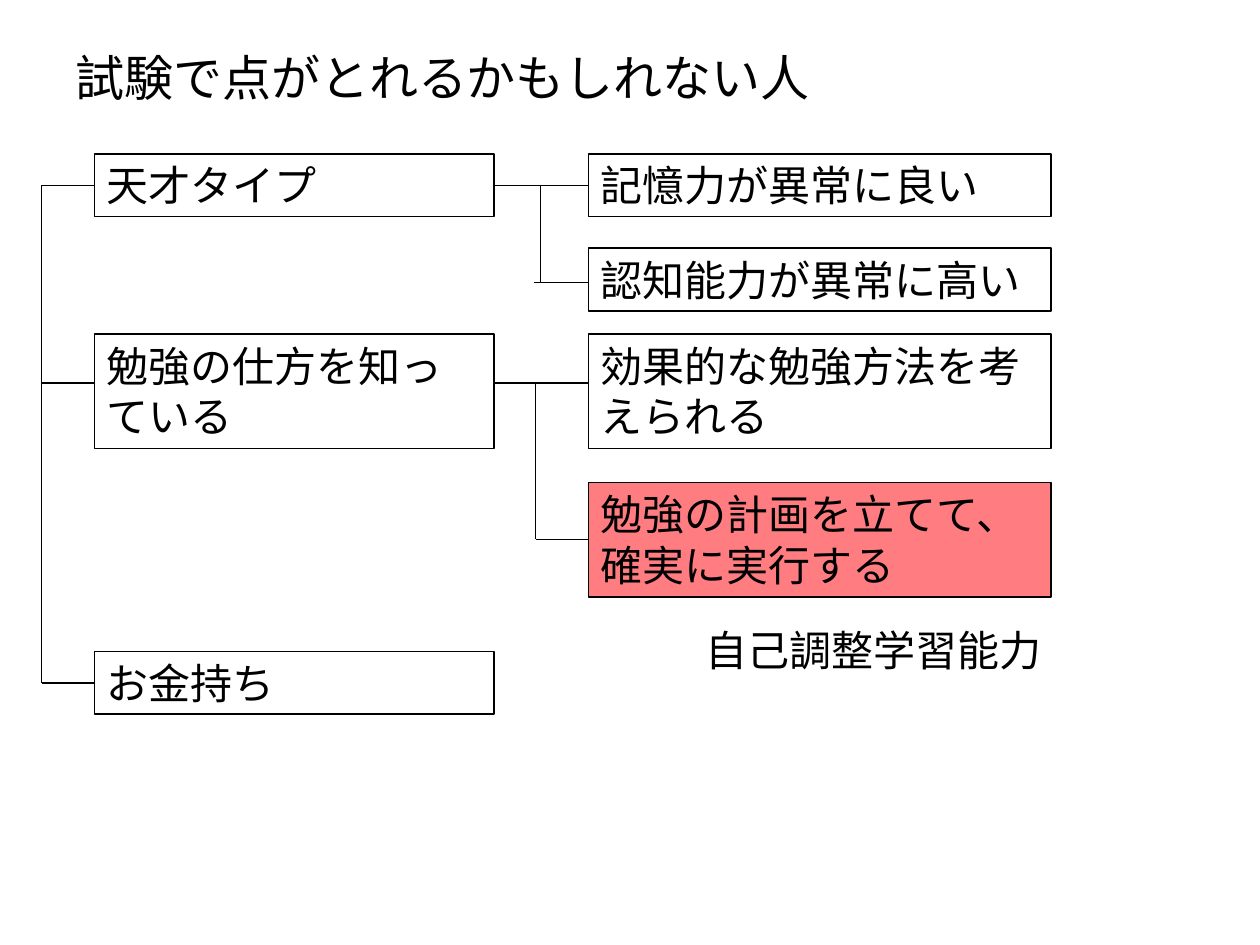
from lxml import etree
from pptx import Presentation
from pptx.dml.color import RGBColor
from pptx.enum.shapes import MSO_CONNECTOR, MSO_SHAPE
from pptx.enum.text import MSO_ANCHOR, MSO_AUTO_SIZE, PP_ALIGN
from pptx.oxml.ns import qn
from pptx.util import Inches, Pt

RECTANGLE = MSO_SHAPE.RECTANGLE
STRAIGHT = MSO_CONNECTOR.STRAIGHT
TOP = MSO_ANCHOR.TOP
LEFT = PP_ALIGN.LEFT
NO_AUTOFIT = MSO_AUTO_SIZE.NONE

FONT = "Noto Sans CJK JP"
COLORS = {"ink": "000000", "highlight": "FF7C80"}

TITLE = "試験で点がとれるかもしれない人"
CAPTION = "自己調整学習能力"
TYPES = [
    ("天才タイプ", 1.22, 0.5),
    ("勉強の仕方を知っている", 2.65, 0.91),
    ("お金持ち", 5.17, 0.5),
]
TRAITS = [
    ("記憶力が異常に良い", 1.22, 0.5, None),
    ("認知能力が異常に高い", 1.97, 0.5, None),
    ("効果的な勉強方法を考えられる", 2.65, 0.91, None),
    ("勉強の計画を立てて、確実に実行する", 3.83, 0.91, "highlight"),
]
BRANCHES = [
    {"start": 1.47, "end": 2.24, "stem": 4.29, "stub": 4.24},
    {"start": 3.04, "end": 4.28, "stem": 4.25, "stub": 4.25},
]

TRUNK = 0.33
TYPE_LEFT, TYPE_WIDTH = 0.75, 3.17
TRAIT_LEFT, TRAIT_WIDTH = 4.67, 3.67
TYPE_RIGHT = TYPE_LEFT + TYPE_WIDTH
TYPE_JOINS = [1.47, 3.04, 5.42]


def color(name):
    return RGBColor.from_string(COLORS[name])


def write(box, text, size):
    frame = box.text_frame
    frame.word_wrap = True
    frame.auto_size = NO_AUTOFIT
    frame.vertical_anchor = TOP
    para = frame.paragraphs[0]
    para.text = text
    para.alignment = LEFT
    para.font.size = Pt(size)
    para.font.color.rgb = color("ink")
    para.font.name = FONT
    defaults = para._p.pPr.find(qn("a:defRPr"))
    etree.SubElement(defaults, qn("a:ea"), typeface=FONT)


def add_box(page, text, left, top, width, height, fill=None):
    box = page.shapes.add_shape(
        RECTANGLE, Inches(left), Inches(top), Inches(width), Inches(height))
    box.shadow.inherit = False
    if fill:
        box.fill.solid()
        box.fill.fore_color.rgb = color(fill)
    else:
        box.fill.background()
    box.line.color.rgb = color("ink")
    box.line.width = Pt(1)
    write(box, text, 24)


def add_line(page, x1, y1, x2, y2):
    line = page.shapes.add_connector(
        STRAIGHT, Inches(x1), Inches(y1), Inches(x2), Inches(y2))
    line.line.color.rgb = color("ink")
    line.line.width = Pt(0.75)
    etree.SubElement(line._element.spPr, qn("a:effectLst"))


def main():
    """Build a slide with a tree of people who may score well in exams."""
    deck = Presentation()
    deck.slide_width, deck.slide_height = Inches(10), Inches(7.5)
    page = deck.slides.add_slide(deck.slide_layouts[5])

    title = page.shapes.title
    title.left, title.top = Inches(0.5), Inches(0.33)
    title.width, title.height = Inches(7.83), Inches(0.57)
    write(title, TITLE, 28)

    for text, top, height in TYPES:
        add_box(page, text, TYPE_LEFT, top, TYPE_WIDTH, height)
    for text, top, height, fill in TRAITS:
        add_box(page, text, TRAIT_LEFT, top, TRAIT_WIDTH, height, fill)

    for join in TYPE_JOINS:
        add_line(page, TRUNK, join, TYPE_LEFT, join)
    add_line(page, TRUNK, TYPE_JOINS[0], TRUNK, TYPE_JOINS[-1])
    for branch in BRANCHES:
        start, end, stem = branch["start"], branch["end"], branch["stem"]
        add_line(page, TYPE_RIGHT, start, TRAIT_LEFT, start)
        add_line(page, branch["stub"], end, TRAIT_LEFT, end)
        add_line(page, stem, start, stem, end)

    caption = page.shapes.add_textbox(
        Inches(5.5), Inches(4.91), Inches(3.75), Inches(0.5))
    write(caption, CAPTION, 24)
    deck.save("out.pptx")


if __name__ == "__main__":
    main()
